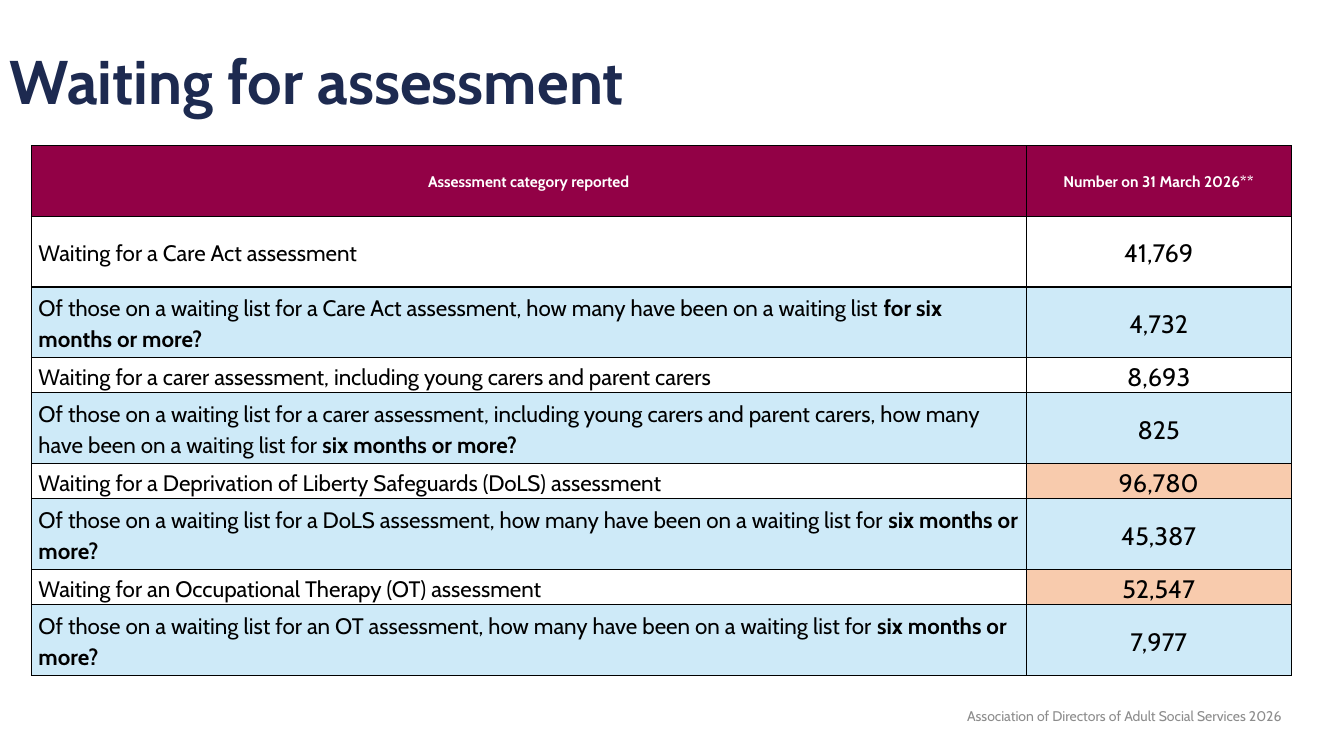
"""Build the slide with the table of people waiting for assessment."""
from lxml.etree import SubElement
from pptx import Presentation
from pptx.dml.color import RGBColor
from pptx.enum.text import MSO_ANCHOR, PP_ALIGN
from pptx.oxml.ns import qn
from pptx.util import Cm, Pt

FONT = "Cabin"
BLACK, WHITE, PLUM, BLUE, PEACH = "000000", "FFFFFF", "920146", "CEEAF8", "F8CBAD"


def paint(color_format, color):
    color_format.rgb = RGBColor.from_string(color)


def write(tf, runs, size, color, align):
    tf.word_wrap = True
    p = tf.paragraphs[0]
    p.alignment = align
    for text, bold in runs:
        r = p.add_run()
        r.text = text
        r.font.name, r.font.size, r.font.bold = FONT, Pt(size), bold
        paint(r.font.color, color)
    return p


prs = Presentation()
prs.slide_width, prs.slide_height = Cm(33.87), Cm(19.05)
s = prs.slides.add_slide(prs.slide_layouts[6])

title = s.shapes.add_textbox(Cm(0), Cm(0.28), Cm(29.21), Cm(3.68))
title.text_frame.vertical_anchor = MSO_ANCHOR.MIDDLE
p = write(title.text_frame, [("Waiting for assessment", True)], 44, "1D2A50", PP_ALIGN.LEFT)
p.line_spacing = 0.9

footer = s.shapes.add_textbox(Cm(21.11), Cm(17.53), Cm(11.43), Cm(1.02))
footer.text_frame.vertical_anchor = MSO_ANCHOR.MIDDLE
write(footer.text_frame, [("Association of Directors of Adult Social Services 2026", False)],
      10, "8C8C8C", PP_ALIGN.RIGHT)

TALL, SHORT = 1.78, 0.89
rows = [
    ("Assessment category reported", "", "Number on 31 March 2026**", TALL, PLUM, PLUM),
    ("Waiting for a Care Act assessment", "", "41,769", TALL, WHITE, WHITE),
    ("Of those on a waiting list for a Care Act assessment, how many have been on a waiting list ",
     "for six months or more?", "4,732", TALL, BLUE, BLUE),
    ("Waiting for a carer assessment, including young carers and parent carers", "",
     "8,693", SHORT, WHITE, WHITE),
    ("Of those on a waiting list for a carer assessment, including young carers and parent carers, "
     "how many have been on a waiting list for ",
     "six months or more?", "825", TALL, BLUE, BLUE),
    ("Waiting for a Deprivation of Liberty Safeguards (DoLS) assessment", "",
     "96,780", SHORT, WHITE, PEACH),
    ("Of those on a waiting list for a DoLS assessment, how many have been on a waiting list for ",
     "six months or more?", "45,387", TALL, BLUE, BLUE),
    ("Waiting for an Occupational Therapy (OT) assessment", "", "52,547", SHORT, WHITE, PEACH),
    ("Of those on a waiting list for an OT assessment, how many have been on a waiting list for ",
     "six months or more?", "7,977", TALL, BLUE, BLUE),
]
table = s.shapes.add_table(len(rows), 2, Cm(0.79), Cm(3.67), Cm(31.75), Cm(13.35)).table
table.columns[0].width, table.columns[1].width = Cm(25.07), Cm(6.68)

for i, (category, emphasis, number, height, left_fill, right_fill) in enumerate(rows):
    table.rows[i].height = Cm(height)
    header = i == 0
    category_runs = [(category, header)]
    if emphasis:
        category_runs.append((emphasis, True))
    columns = [(category_runs, 16, left_fill), ([(number, header)], 18, right_fill)]
    for j, (runs, size, fill) in enumerate(columns):
        cell = table.cell(i, j)
        cell.vertical_anchor = MSO_ANCHOR.MIDDLE
        cell.margin_left = cell.margin_right = Cm(0.18)
        cell.margin_top = cell.margin_bottom = Cm(0)
        align = PP_ALIGN.CENTER if header or j == 1 else PP_ALIGN.LEFT
        p = write(cell.text_frame, runs, 11 if header else size, WHITE if header else BLACK, align)
        p.line_spacing = 1.15
        p.space_after = Pt(8)
        for side in ("lnL", "lnR", "lnT", "lnB"):
            ln = SubElement(cell._tc.get_or_add_tcPr(), qn(f"a:{side}"), w=str(Pt(1)))
            SubElement(SubElement(ln, qn("a:solidFill")), qn("a:srgbClr"), val=BLACK)
        cell.fill.solid()
        paint(cell.fill.fore_color, fill)

prs.save("out.pptx")
